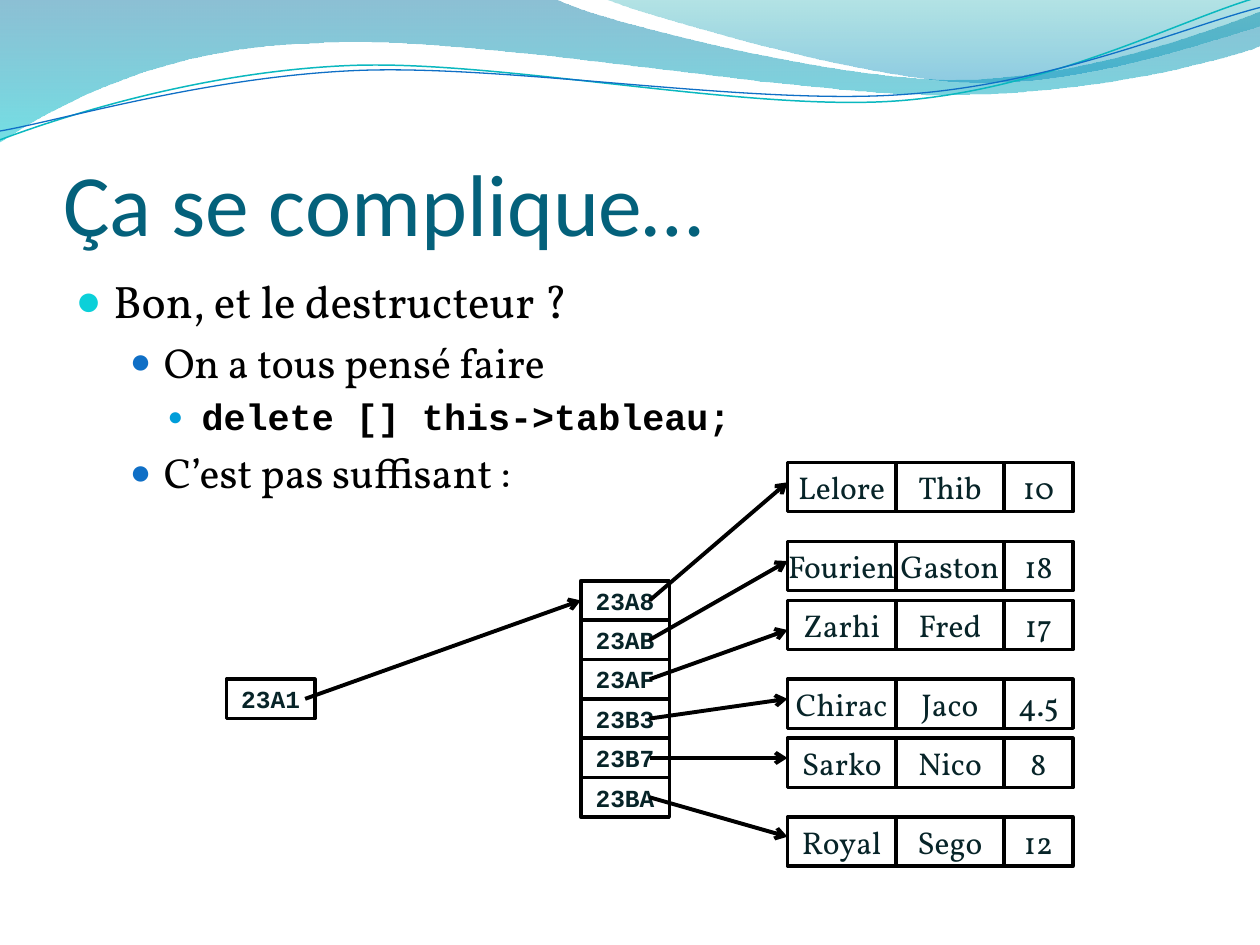
import math

from lxml import etree
from pptx import Presentation, util as u
from pptx.dml.color import RGBColor
from pptx.enum import shapes, text
from pptx.oxml.ns import qn

BLACK = RGBColor(0, 0, 0)
WHITE = RGBColor(0xFF, 0xFF, 0xFF)
INK = RGBColor(0x07, 0x24, 0x28)
TITLE = RGBColor(0x04, 0x61, 0x7B)
AQUA = RGBColor(0x0B, 0xD0, 0xD9)
BLUE = RGBColor(0x0F, 0x6F, 0xC6)
SKY = RGBColor(0x00, 0x9D, 0xD9)
TEAL = RGBColor(0x0A, 0xB8, 0xBF)
SERIF, MONO = "Vollkorn", "Courier New"

deck = Presentation()
deck.slide_width, deck.slide_height = u.Inches(10), u.Inches(7.5)
page = deck.slides.add_slide(deck.slide_layouts[1])
UNIT = deck.slide_width // 128  # the diagram sits on a grid of 128 by 96 units


def add_box(column, row, width, height, label, font, size):
    box = page.shapes.add_shape(shapes.MSO_SHAPE.RECTANGLE, column * UNIT, row * UNIT,
                                width * UNIT, height * UNIT)
    box.shadow.inherit = False
    box.fill.solid()
    box.fill.fore_color.rgb = WHITE
    box.line.color.rgb, box.line.width = BLACK, u.Pt(2)
    frame = box.text_frame
    frame.margin_left = frame.margin_right = frame.margin_top = frame.margin_bottom = 0
    frame.vertical_anchor = text.MSO_ANCHOR.MIDDLE
    frame.word_wrap = font == MONO
    para = frame.paragraphs[0]
    para.text, para.alignment = label, text.PP_ALIGN.CENTER
    para.font.name, para.font.size, para.font.bold = font, u.Pt(size), font == MONO
    para.font.color.rgb = INK


def add_arrow(*ends):
    arrow = page.shapes.add_connector(shapes.MSO_CONNECTOR.STRAIGHT, *[end * UNIT for end in ends])
    arrow.line.color.rgb, arrow.line.width = BLACK, u.Pt(2.25)
    properties = arrow._element.spPr
    etree.SubElement(properties.find(qn("a:ln")), qn("a:tailEnd"), type="arrow")
    etree.SubElement(properties, qn("a:effectLst"))


# Waves: a start, then straight (2 numbers) or cubic (6 numbers) segments, in inches.
# Bands have a gradient of (colour, opacity) stops; lines a colour, a width and a turning centre.
TILT = -2.7
waves = [
    ([(0, 0), (4.4, -0.01), (4.76, 0.17, 6.64, 0.63, 7.58, 0.63),
      (8.53, 0.63, 9.58, 0.26, 10, 0.09), (10.01, 0.36),
      (9.83, 0.44, 8.7, 0.76, 7.46, 0.75), (6.22, 0.75, 3.82, 0.28, 2.57, 0.34),
      (1.29, 0.36, 0.46, 0.83, -0.01, 1.13), (0, 0)],
     [(RGBColor(0x00, 0x74, 0xA1), 45), (RGBColor(0x00, 0xC6, 0xCF), 55)], None, None),
    ([(4.79, -0.01), (5.09, 0.11, 6.82, 0.62, 7.69, 0.65),
      (8.56, 0.69, 9.61, 0.32, 10, 0.21), (10, 0), (4.79, -0.01)],
     [(RGBColor(0x00, 0xA1, 0xA9), 30), (RGBColor(0x00, 0x8B, 0xBF), 45)], None, None),
    ([(0, 1.11), (0.48, 0.93, 1.58, 0.57, 2.77, 0.52), (3.95, 0.47, 5.93, 0.89, 7.13, 0.8),
      (8.33, 0.71, 9.38, 0.15, 9.98, -0.02)], TEAL, 0.85, (4.99, 0.57)),
    ([(0, 1.04), (0.47, 0.96, 1.64, 0.61, 2.83, 0.56), (4.03, 0.51, 5.97, 0.84, 7.17, 0.75),
      (8.36, 0.67, 9.41, 0.21, 10, 0.06)], BLUE, 0.75, (5, 0.59)),
]
for segments, paint, width, centre in waves:
    points = [segment[i:i + 2] for segment in segments for i in range(0, len(segment), 2)]
    if centre:  # lay the line level, it is tilted as a whole below
        sine, cosine = math.sin(math.radians(-TILT)), math.cos(math.radians(TILT))
        offsets = [(x - centre[0], y - centre[1]) for x, y in points]
        points = [(centre[0] + x * cosine - y * sine, centre[1] + x * sine + y * cosine)
                  for x, y in offsets]
    points = [(u.Inches(x), u.Inches(y)) for x, y in points]
    builder = page.shapes.build_freeform(*points[0])
    builder.add_line_segments(points[1:], close=width is None)
    wave = builder.convert_to_shape()
    wave.shadow.inherit = False

    # Join each three points of a cubic segment into one curve
    corners = iter(list(wave._element.iter(qn("a:lnTo"))))
    for segment in segments[1:]:
        curve = next(corners)
        if len(segment) == 6:
            curve.tag = qn("a:cubicBezTo")
            for corner in (next(corners), next(corners)):
                curve.append(corner[0])
                corner.getparent().remove(corner)

    if width:
        wave.rotation = TILT
        wave.fill.background()
        wave.line.color.rgb, wave.line.width = paint, u.Pt(width)
        continue
    wave.line.fill.background()
    wave.fill.gradient()
    wave.fill.gradient_angle = 270
    for stop, (colour, opacity) in zip(wave.fill.gradient_stops, paint):
        stop.color.rgb = colour
        etree.SubElement(stop._gs.find(qn("a:srgbClr")), qn("a:alpha"), val=str(opacity * 1000))

# Title
title, body = page.shapes.title, page.placeholders[1]
for holder, top, height in ((title, 0.77, 1.25), (body, 2.12, 4.8)):
    holder.left, holder.width = u.Inches(0.5), u.Inches(9)
    holder.top, holder.height = u.Inches(top), u.Inches(height)
    page.shapes._spTree.append(holder._element)  # in front of the waves
frame = title.text_frame
frame.text = "Ça se complique…"
frame.vertical_anchor = text.MSO_ANCHOR.BOTTOM
frame.margin_left = frame.margin_right = frame.margin_bottom = 0
para = frame.paragraphs[0]
para.alignment = text.PP_ALIGN.LEFT
para.font.name, para.font.size, para.font.color.rgb = "Calibri", u.Pt(50), TITLE

# Bulleted list: level -> margin, hanging indent, bullet colour, bullet size in percent
levels = [(0.3, 0.3, AQUA, 95), (0.7, 0.27, BLUE, 85), (1, 0.27, SKY, 70)]
items = [
    (0, "Bon, et le destructeur ?", SERIF, 26),
    (1, "On a tous pensé faire", SERIF, 24),
    (2, "delete [] this->tableau;", MONO, 21),
    (1, "C’est pas suffisant :", SERIF, 24),
]
for index, (level, words, font, size) in enumerate(items):
    para = body.text_frame.add_paragraph() if index else body.text_frame.paragraphs[0]
    para.text, para.level = words, level
    para.font.name, para.font.size, para.font.bold = font, u.Pt(size), font == MONO
    para.font.color.rgb = BLACK
    margin, hanging, colour, percent = levels[level]
    properties = para._p.get_or_add_pPr()
    properties.set("marL", str(u.Inches(margin)))
    properties.set("indent", str(-u.Inches(hanging)))
    bullet = [etree.Element(qn("a:buClr")),
              etree.Element(qn("a:buSzPct"), val=str(percent * 1000)),
              etree.Element(qn("a:buFont"), typeface="Arial"),
              etree.Element(qn("a:buChar"), char="●")]
    etree.SubElement(bullet[0], qn("a:srgbClr"), val=str(colour))
    for place, part in enumerate(bullet):
        properties.insert(place, part)

# Array of addresses, each pointing to its record (row of the record, row of the arrow tip)
records = [
    ("23A8", 47, 49, ("Lelore", "Thib", "10")),
    ("23AB", 55, 57, ("Fourien", "Gaston", "18")),
    ("23AF", 61, 64, ("Zarhi", "Fred", "17")),
    ("23B3", 69, 71, ("Chirac", "Jaco", "4.5")),
    ("23B7", 75, 77, ("Sarko", "Nico", "8")),
    ("23BA", 83, 85, ("Royal", "Sego", "12")),
]
for index, (address, *_) in reversed(list(enumerate(records))):
    add_box(59, 59 + 4 * index, 9, 4, address, MONO, 14)
for index, (_, _, tip, _) in enumerate(records):
    add_arrow(66, 61 + 4 * index, 80, tip)
for _, row, _, fields in records:
    for column, width, field in zip((80, 91, 102), (11, 11, 7), fields):
        add_box(column, row, width, 5, field, SERIF, 18)

# Pointer to the array
add_box(23, 69, 9, 4, "23A1", MONO, 14)
add_arrow(31, 71, 59, 61)

deck.save("out.pptx")
